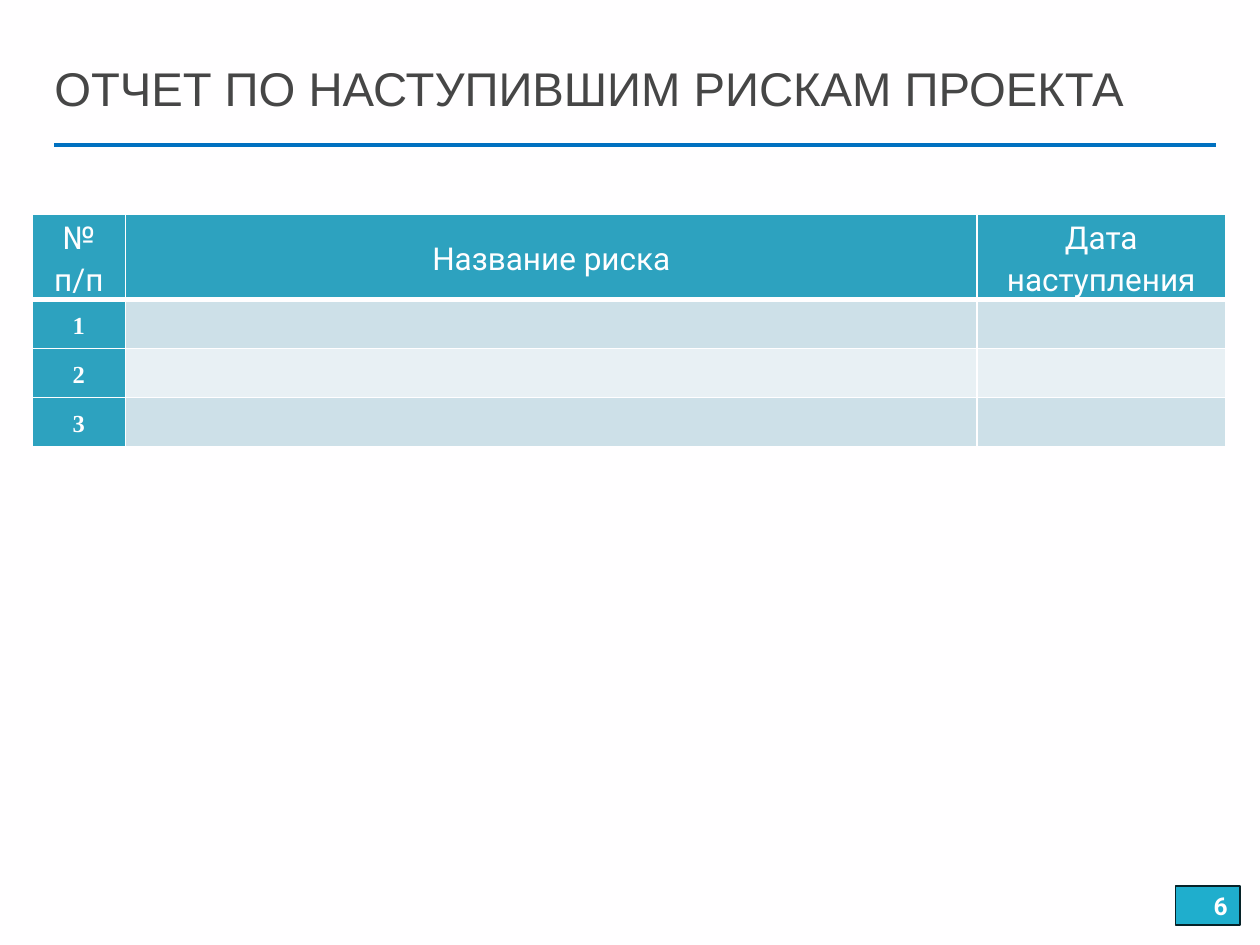
from dataclasses import dataclass

from lxml.etree import SubElement
from pptx import Presentation
from pptx.dml.color import RGBColor as Rgb
from pptx.enum.shapes import MSO_CONNECTOR as Connector, MSO_SHAPE as Shape
from pptx.enum.text import MSO_ANCHOR as Anchor, MSO_AUTO_SIZE as AutoSize, PP_ALIGN as Align
from pptx.oxml.ns import qn
from pptx.util import Cm, Pt


@dataclass(frozen=True)
class Theme:
    paper: str = "FFFEFF"
    title: str = "464646"
    rule: str = "0070C0"
    head: str = "2DA2BF"
    bands: tuple = ("CDE0E8", "E8F0F4")
    badge: str = "1FAECD"
    badge_edge: str = "062329"
    title_font: str = "Arial"
    body_font: str = "Roboto"
    number_font: str = "Times New Roman"
    title_size: int = 27
    head_size: int = 18
    number_size: int = 14


THEME = Theme()
HEADINGS = ("№ п/п", "Название риска", "Дата наступления")
COLUMN_WIDTHS = (1.88, 17.17, 5)
RISK_COUNT = 3
HEAD_HEIGHT, ROW_HEIGHT = 1.7, 0.99


def paint(fill, color):
    fill.solid()
    fill.fore_color.rgb = Rgb.from_string(color)


def add_span(para, text, font, size, color, bold=False):
    span = para.add_run()
    span.text = text
    span.font.name = font
    span.font.size = Pt(size)
    span.font.bold = bold
    span.font.color.rgb = Rgb.from_string(color)


def set_title(page, text):
    box = page.shapes.title
    box.left, box.top, box.width, box.height = Cm(0.84), Cm(1.12), Cm(24.13), Cm(2.34)
    frame = box.text_frame
    frame.auto_size = AutoSize.NONE
    frame.word_wrap = True
    frame.vertical_anchor = Anchor.MIDDLE
    frame.margin_bottom = Cm(1.17)  # lifts the text above the rule
    para = frame.paragraphs[0]
    para.alignment = Align.LEFT
    add_span(para, text, THEME.title_font, THEME.title_size, THEME.title)


def add_rule(page, left, right, top):
    rule = page.shapes.add_connector(Connector.STRAIGHT, Cm(left), Cm(top), Cm(right), Cm(top))
    rule.line.color.rgb = Rgb.from_string(THEME.rule)
    rule.line.width = Pt(2)
    SubElement(rule.element.spPr, qn("a:effectLst"))


def set_borders(cell, top, bottom):
    properties = cell._tc.get_or_add_tcPr()
    for side, width in (("L", 1), ("R", 1), ("T", top), ("B", bottom)):
        line = SubElement(properties, qn(f"a:ln{side}"), w=str(Pt(width)))
        fill = SubElement(line, qn("a:solidFill"))
        SubElement(fill, qn("a:srgbClr"), val=THEME.paper)


def format_cell(cell, color, top=1, bottom=1):
    cell.margin_left = cell.margin_right = Cm(0.05)
    cell.margin_top = cell.margin_bottom = 0
    cell.vertical_anchor = Anchor.MIDDLE
    set_borders(cell, top, bottom)
    paint(cell.fill, color)


def write_cell(cell, text, font, size, bold=False):
    para = cell.text_frame.paragraphs[0]
    para.alignment = Align.CENTER
    para.line_spacing = 1.15
    add_span(para, text, font, size, THEME.paper, bold)


def add_risk_table(page):
    height = HEAD_HEIGHT + RISK_COUNT * ROW_HEIGHT
    table = page.shapes.add_table(
        RISK_COUNT + 1, len(HEADINGS), Cm(0.65), Cm(4.32), Cm(sum(COLUMN_WIDTHS)), Cm(height)
    ).table
    for column, width in zip(table.columns, COLUMN_WIDTHS):
        column.width = Cm(width)

    # Header row
    table.rows[0].height = Cm(HEAD_HEIGHT)
    for index, heading in enumerate(HEADINGS):
        cell = table.cell(0, index)
        format_cell(cell, THEME.head, bottom=3)
        write_cell(cell, heading, THEME.body_font, THEME.head_size)

    # Numbered, banded rows
    for number in range(1, RISK_COUNT + 1):
        table.rows[number].height = Cm(ROW_HEIGHT)
        band = THEME.bands[(number - 1) % 2]
        for index in range(len(HEADINGS)):
            color = band if index else THEME.head
            format_cell(table.cell(number, index), color, top=3 if number == 1 else 1)
        write_cell(table.cell(number, 0), str(number), THEME.number_font, THEME.number_size, True)


def add_page_number(page, text):
    box = page.shapes.add_shape(Shape.RECTANGLE, Cm(23.7), Cm(17.86), Cm(1.3), Cm(0.79))
    box.shadow.inherit = False
    paint(box.fill, THEME.badge)
    box.line.color.rgb = Rgb.from_string(THEME.badge_edge)
    box.line.width = Pt(0.75)
    box.text_frame.vertical_anchor = Anchor.MIDDLE
    para = box.text_frame.paragraphs[0]
    para.alignment = Align.RIGHT
    add_span(para, text, THEME.body_font, THEME.number_size, THEME.paper, True)


def main():
    deck = Presentation()
    deck.slide_width, deck.slide_height = Cm(25.4), Cm(19.05)
    page = deck.slides.add_slide(deck.slide_layouts[5])
    paint(page.background.fill, THEME.paper)

    set_title(page, "ОТЧЕТ ПО НАСТУПИВШИМ РИСКАМ ПРОЕКТА")
    add_risk_table(page)
    add_rule(page, 1.09, 24.51, 2.92)
    add_page_number(page, "6")
    deck.save("out.pptx")


if __name__ == "__main__":
    main()
